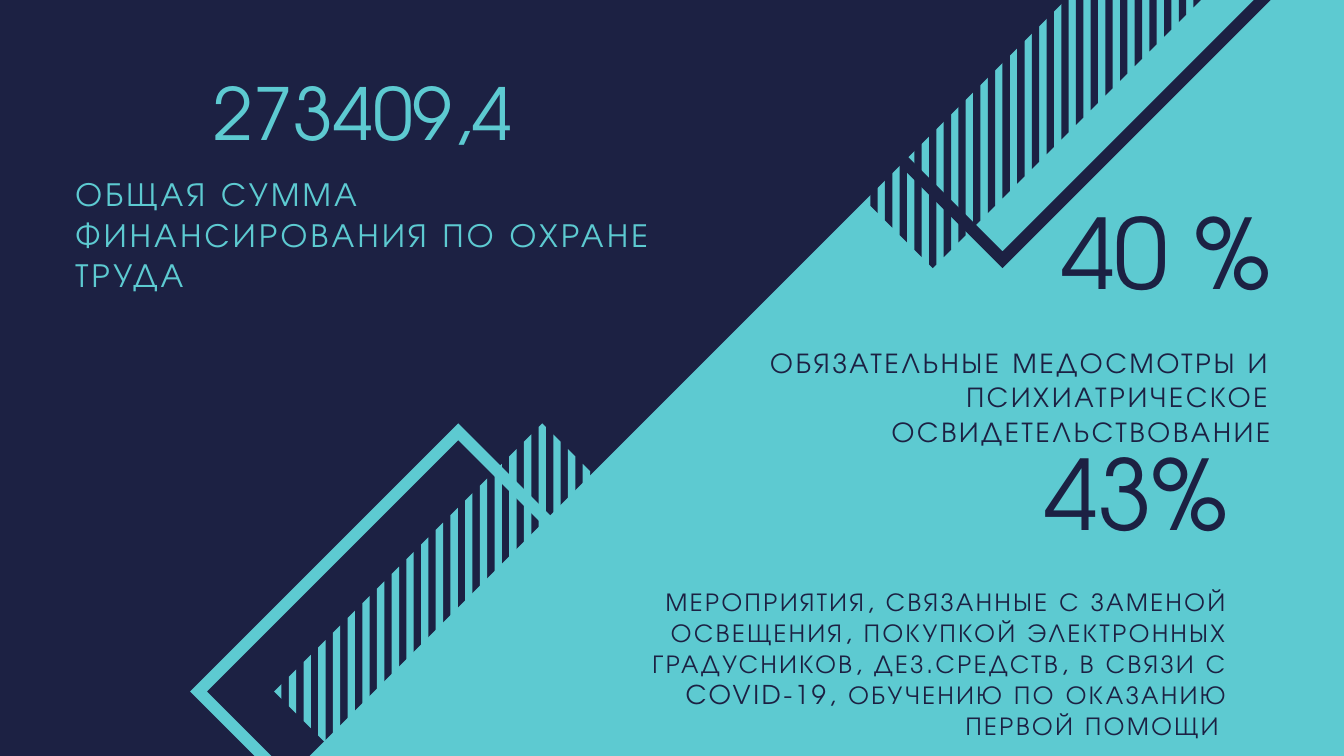
import math
from pptx import Presentation, util as u
from pptx.dml.color import RGBColor
from pptx.enum import shapes, text

HUES = {"navy": "1C2143", "teal": "5DCAD1"}
FONT = "TeX Gyre Adventor"

deck = Presentation()
deck.slide_width, deck.slide_height = u.Inches(20), u.Inches(11.25)
cell = deck.slide_width / 20  # a grid of 20 columns, with square cells
slide = deck.slides.add_slide(deck.slide_layouts[6])
slide.background.fill.solid()
slide.background.fill.fore_color.rgb = RGBColor.from_string(HUES["navy"])


def add_text(words, box, size, hue, lead, align="LEFT", gap=0, tail=0):
    """Place words in a box of grid cells; lead is in points.

    gap is the letter spacing as a share of the size; tail is the same for
    one closing space, which sets the last line in from the right edge.
    """
    area = slide.shapes.add_textbox(*(u.Emu(round(n * cell)) for n in box))
    frame = area.text_frame
    frame.margin_left = frame.margin_right = 0
    frame.margin_top = frame.margin_bottom = 0
    frame.word_wrap = True
    frame.auto_size = text.MSO_AUTO_SIZE.SHAPE_TO_FIT_TEXT
    para = frame.paragraphs[0]
    para.alignment = getattr(text.PP_ALIGN, align)
    para.line_spacing = u.Pt(lead)
    for part, space in [(words, gap)] + [(" ", tail)] * bool(tail):
        run = para.add_run()
        run.text = part
        run.font.size = u.Pt(size)
        run.font.name = FONT
        run.font.color.rgb = RGBColor.from_string(HUES[hue])
        if space:
            run.font._element.set("spc", str(round(space * size * 100)))


def add_tilted(rings, mid, hue):
    """Draw rings given around mid, held upright and then turned by 315 degrees."""
    turn = math.sqrt(0.5)
    rings = [[((mid[0] + (x - y) * turn) * cell, (mid[1] + (x + y) * turn) * cell)
              for x, y in ring] for ring in rings]
    pen = slide.shapes.build_freeform(*rings[0][0])
    pen.add_line_segments(rings[0][1:], close=True)
    for ring in rings[1:]:
        pen.move_to(*ring[0])
        pen.add_line_segments(ring[1:], close=True)
    form = pen.convert_to_shape()
    form.rotation = 315
    form.shadow.inherit = False
    form.fill.solid()
    form.fill.fore_color.rgb = RGBColor.from_string(HUES[hue])
    form.line.fill.background()


# Both ornaments share one diamond frame and one diamond of upright stripes.
outer, inner = 3.99, 3.74
frame = [[(-r, 0), (0, r), (r, 0), (0, -r)] for r in (outer, inner)]
step = outer / 18.25
stripes = []
for k in range(-18, 19):
    left, right = (k - 0.25) * step, (k + 0.25) * step
    a, b = outer - abs(left), outer - abs(right)
    tip = k == 0
    stripes.append([(left, -a)] + [(0, -outer)] * tip + [(right, -b), (right, b)]
                   + [(0, outer)] * tip + [(left, a)])

add_tilted(frame, (6.82, 10.29), "teal")
add_tilted(stripes, (8.07, 10.29), "teal")

half = slide.shapes.add_shape(shapes.MSO_SHAPE.RECTANGLE,
                              *(u.Emu(round(n * cell)) for n in (2.87, 3.85, 23.02, 11.45)))
half.rotation = 315
half.shadow.inherit = False
half.fill.solid()
half.fill.fore_color.rgb = RGBColor.from_string(HUES["teal"])
half.line.fill.background()

add_text("273409,4 ", (1.13, 1.24, 8.85, 1.2), 77, "teal", 77, "CENTER")
add_text("ОБЩАЯ СУММА ФИНАНСИРОВАНИЯ ПО ОХРАНЕ ТРУДА",
         (1.12, 2.58, 8.85, 1.79), 36, "teal", 43.2, gap=0.1)

add_text("43%", (8.51, 6.74, 9.76, 1.62), 104, "navy", 104, "RIGHT")
add_text("МЕРОПРИЯТИЯ, СВЯЗАННЫЕ С ЗАМЕНОЙ ОСВЕЩЕНИЯ, ПОКУПКОЙ ЭЛЕКТРОННЫХ "
         "ГРАДУСНИКОВ, ДЕЗ.СРЕДСТВ, В СВЯЗИ С COVID-19, ОБУЧЕНИЮ ПО ОКАЗАНИЮ "
         "ПЕРВОЙ ПОМОЩИ",
         (8.51, 8.71, 9.77, 2.29), 27.7, "navy", 33.3, "RIGHT", gap=0.1, tail=0.48)

add_tilted(frame, (14.92, 0), "navy")
add_tilted(stripes, (13.88, 0), "navy")

add_text("40 %", (10.06, 3.15, 8.85, 1.62), 104, "navy", 104, "RIGHT")
add_text("ОБЯЗАТЕЛЬНЫЕ МЕДОСМОТРЫ И ПСИХИАТРИЧЕСКОЕ ОСВИДЕТЕЛЬСТВОВАНИЕ",
         (10.06, 5.13, 8.85, 1.52), 30.7, "navy", 36.9, "RIGHT", gap=0.1)

deck.save("out.pptx")
